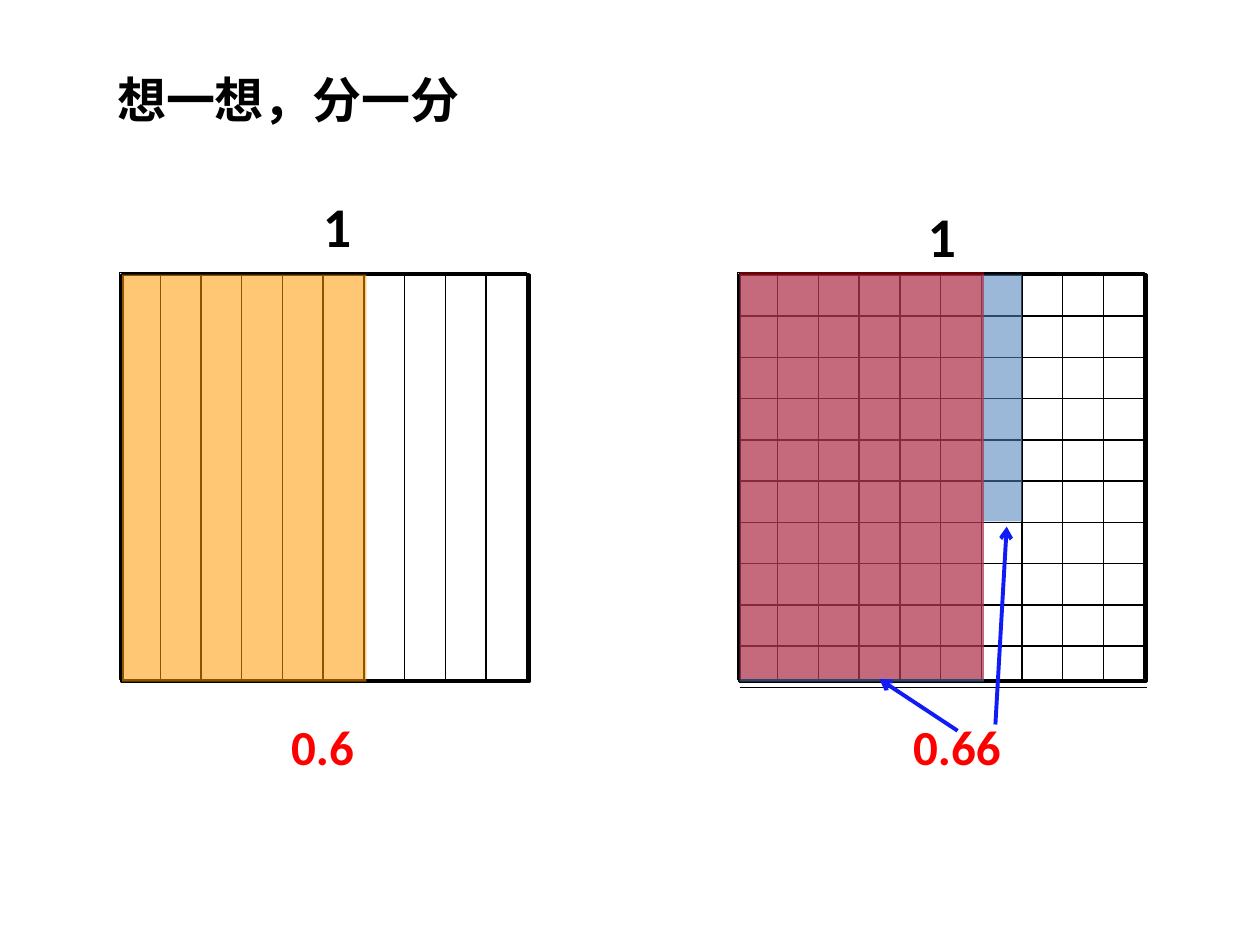
"""Builds a slide that shows 0.6 and 0.66 as shaded parts of a unit square."""
from dataclasses import dataclass
from typing import Any

from lxml.etree import SubElement
from pptx import Presentation
from pptx.dml.color import RGBColor
from pptx.enum.shapes import MSO_CONNECTOR, MSO_SHAPE
from pptx.enum.text import MSO_ANCHOR, MSO_AUTO_SIZE, PP_ALIGN
from pptx.oxml.ns import qn
from pptx.util import Inches, Pt

BLACK = RGBColor(0x00, 0x00, 0x00)
WHITE = RGBColor(0xFF, 0xFF, 0xFF)
RED = RGBColor(0xFF, 0x00, 0x00)
AMBER = RGBColor(0xFF, 0x99, 0x00)
BLUE = RGBColor(0x4F, 0x81, 0xBD)
INK = RGBColor(0x10, 0x1B, 0xF6)

WIDE, HIGH = Inches(10), Inches(7.5)
PARTS = 10
CELL = int(WIDE * 3.23 / 100)
SIDE = CELL * PARTS
TOP = int(HIGH * 29.07 / 100)
SHIFT = 0.06


@dataclass(frozen=True)
class Panel:
    """A unit square, its left edge in percent of the slide width."""
    left: float
    rows: bool = False

    def place(self, col: float, row: float, cols: float, rows: float) -> list[int]:
        """Turn grid columns and rows into slide lengths."""
        left = int(WIDE * self.left / 100)
        return [left + int(col * CELL), TOP + int(row * CELL),
                int(cols * CELL), int(rows * CELL)]


@dataclass(frozen=True)
class Shade:
    """A tinted area in grid columns and rows, its opacity in percent."""
    panel: Panel
    area: tuple[float, float, float, float]
    color: RGBColor
    alpha: int


@dataclass(frozen=True)
class Label:
    """A text with its box in percent of the slide size."""
    text: str
    area: tuple[float, float, float, float]
    size: int
    color: RGBColor


@dataclass(frozen=True)
class Arrow:
    """A pointer between two points in percent of the slide size."""
    start: tuple[float, float]
    end: tuple[float, float]


TENTHS = Panel(9.7)
CENTS = Panel(58.7, rows=True)
LABELS = (
    Label("1", (18.5, 19.6, 16.5, 8.53), 32, BLACK),
    Label("1", (66.5, 20.67, 16.5, 8.53), 32, BLACK),
    Label("0.6", (19.3, 75.2, 12.6, 7.6), 28, RED),
    Label("0.66", (68.1, 75.2, 15.7, 7.6), 28, RED),
)
SHADES = (
    Shade(TENTHS, (0, 0, 6, 10), AMBER, 55),
    Shade(CENTS, (0, 0, 6, 10), BLUE, 56),
    Shade(CENTS, (6 - SHIFT, 0, 1, 6 + SHIFT), BLUE, 56),
    Shade(CENTS, (0, -SHIFT, 6, 10), RED, 42),
)
ARROWS = (Arrow((76, 77.33), (69.8, 71.87)), Arrow((79, 76.67), (79.9, 55.73)))


def scale(*area: float) -> list[int]:
    """Turn percents of the slide, across and down in turn, into lengths."""
    return [int((HIGH if i % 2 else WIDE) * part / 100) for i, part in enumerate(area)]


def write(shape: Any, text: str, *, size: int, color: RGBColor = BLACK,
          font: str = "Calibri", align: PP_ALIGN = PP_ALIGN.CENTER) -> None:
    """Put one bold line of text in a shape."""
    frame = shape.text_frame
    frame.word_wrap = True
    frame.auto_size = MSO_AUTO_SIZE.SHAPE_TO_FIT_TEXT
    frame.vertical_anchor = MSO_ANCHOR.TOP
    line = frame.paragraphs[0]
    line.alignment = align
    run = line.add_run()
    run.text = text
    run.font.name, run.font.size, run.font.bold = font, Pt(size), True
    run.font.color.rgb = color
    SubElement(run.font._element, qn("a:ea"), typeface=font)


def rect(shapes: Any, area: list[int], fill: RGBColor | None = None,
         line: float = 0, alpha: int = 100) -> None:
    """Draw a rectangle with a black outline if a line width is given."""
    shape = shapes.add_shape(MSO_SHAPE.RECTANGLE, *area)
    shape.shadow.inherit = False
    if fill is None:
        shape.fill.background()
    else:
        shape.fill.solid()
        shape.fill.fore_color.rgb = fill
    if alpha < 100:
        tint = shape.fill._xPr.find(qn("a:solidFill"))[0]
        SubElement(tint, qn("a:alpha"), val=str(alpha * 1000))
    if line:
        shape.line.color.rgb = BLACK
        shape.line.width = Pt(line)
    else:
        shape.line.fill.background()


def edge(cell: Any) -> None:
    """Rule a cell above and below only, and leave it clear."""
    props = cell._tc.get_or_add_tcPr()
    for side in "LRTB":
        line = SubElement(props, qn(f"a:ln{side}"), w=str(Pt(1)))
        if side in "LR":
            SubElement(line, qn("a:noFill"))
        else:
            fill = SubElement(line, qn("a:solidFill"))
            SubElement(fill, qn("a:srgbClr"), val=str(BLACK))
    cell.fill.background()


def rule(shapes: Any, panel: Panel) -> None:
    """Lay a table of ten rows over a panel."""
    area = panel.place(0, 0, PARTS, PARTS * 1.015)
    table = shapes.add_table(PARTS, 1, *area).table
    table.first_row = table.horz_banding = False
    for row in table.rows:
        cell = row.cells[0]
        cell.margin_top = cell.margin_bottom = 0
        edge(cell)


def draw(shapes: Any, panel: Panel) -> None:
    """Draw the strips, rows and frame of a panel."""
    group = shapes.add_group_shape()
    for col in range(PARTS):
        rect(group.shapes, panel.place(col - SHIFT, -SHIFT, 1, PARTS), WHITE, 0.75)
    if panel.rows:
        rule(shapes, panel)
    rect(shapes, panel.place(0, 0, PARTS, PARTS), line=2)


def point(shapes: Any, arrow: Arrow) -> None:
    """Draw a line with an open arrowhead at its end."""
    line = shapes.add_connector(MSO_CONNECTOR.STRAIGHT, *scale(*arrow.start, *arrow.end))
    line.line.color.rgb = INK
    line.line.width = Pt(2.25)
    SubElement(line.line._get_or_add_ln(), qn("a:tailEnd"), type="arrow")
    SubElement(line._element.spPr, qn("a:effectLst"))


def main() -> None:
    """Build and save the slide."""
    deck = Presentation()
    deck.slide_width, deck.slide_height = WIDE, HIGH
    slide = deck.slides.add_slide(deck.slide_layouts[5])
    shapes = slide.shapes
    title = shapes.title
    title.left, title.top, title.width, title.height = scale(8.3, 6.67, 40.2, 7.6)
    write(title, "想一想，分一分", size=28, font="Noto Sans CJK SC", align=PP_ALIGN.LEFT)
    for panel in (CENTS, TENTHS):
        draw(shapes, panel)
    for label in LABELS:
        box = shapes.add_textbox(*scale(*label.area))
        write(box, label.text, size=label.size, color=label.color)
    for shade in SHADES:
        rect(shapes, shade.panel.place(*shade.area), shade.color, alpha=shade.alpha)
    for arrow in ARROWS:
        point(shapes, arrow)
    deck.save("out.pptx")


if __name__ == "__main__":
    main()
